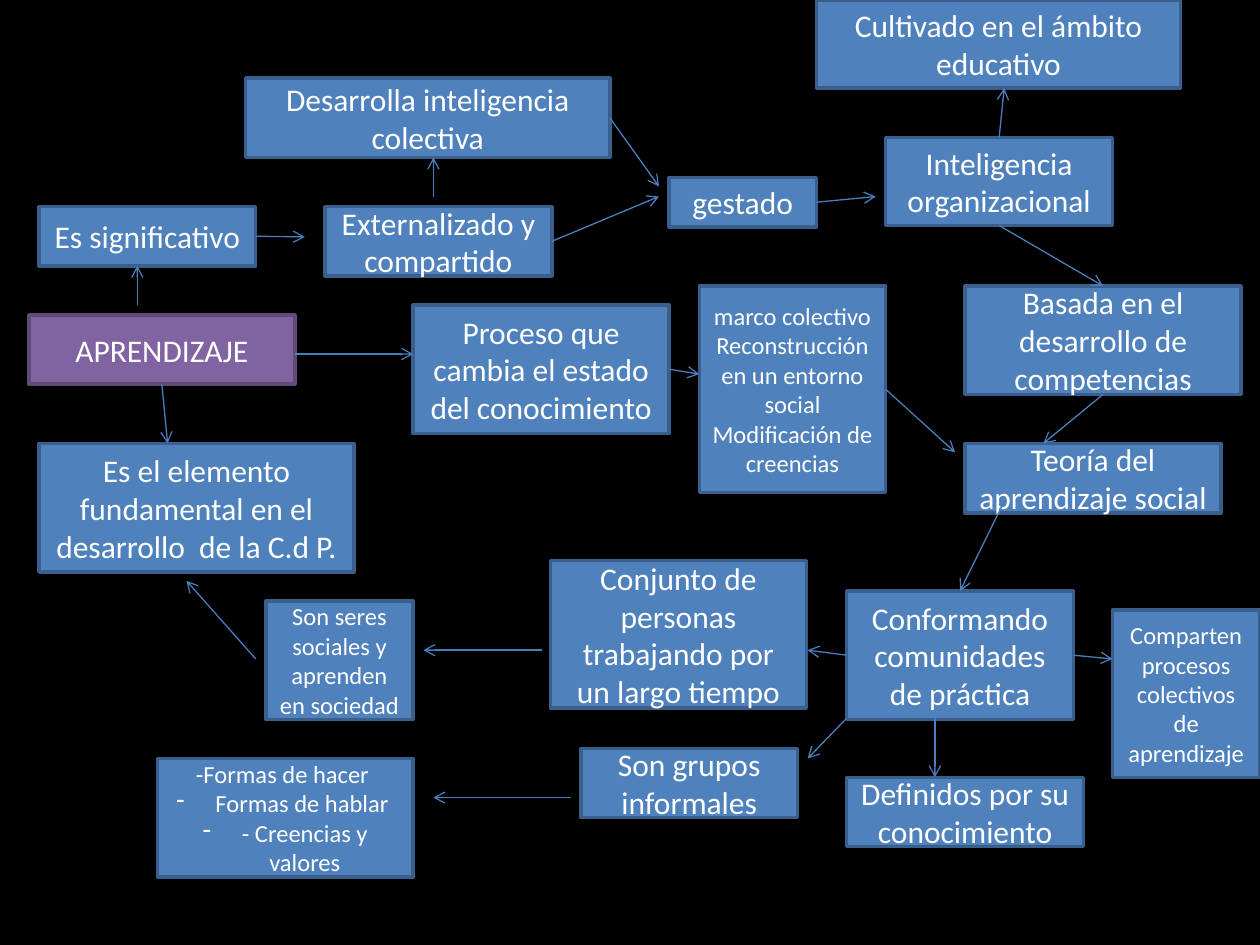
import pptx
import pptx.util
import pptx.dml.color
import pptx.enum.shapes
import pptx.enum.text
import pptx.oxml.ns
import lxml.etree

Inches = pptx.util.Inches
RGBColor = pptx.dml.color.RGBColor
BLACK = RGBColor(0x00, 0x00, 0x00)
WHITE = RGBColor(0xFF, 0xFF, 0xFF)
BLUE = RGBColor(0x4F, 0x81, 0xBD)
BLUE_EDGE = RGBColor(0x3A, 0x5F, 0x8C)
PURPLE = RGBColor(0x80, 0x64, 0xA2)
PURPLE_EDGE = RGBColor(0x5F, 0x4A, 0x78)
ARROW = RGBColor(0x4B, 0x7E, 0xBC)

FONT = "Calibri"
LARGE, SMALL = 18, 14
TOP, LEFT, BOTTOM, RIGHT = range(4)

# Concepts: name -> (left, top, width, height), text size, paragraphs
CONCEPTS = {
    "aprendizaje": ((0.23, 2.5, 2.11, 0.55), LARGE, ["APRENDIZAJE"]),
    "proceso": ((3.28, 2.42, 2.03, 1.02), LARGE,
                ["Proceso que cambia el estado del conocimiento"]),
    "significativo": ((0.31, 1.64, 1.72, 0.47), LARGE, ["Es significativo"]),
    "externalizado": ((2.58, 1.64, 1.8, 0.55), LARGE, ["Externalizado y compartido"]),
    "colectiva": ((1.95, 0.62, 2.89, 0.63), LARGE, ["Desarrolla inteligencia colectiva"]),
    "gestado": ((5.31, 1.41, 1.17, 0.39), LARGE, ["gestado"]),
    "organizacional": ((7.03, 1.09, 1.8, 0.7), LARGE, ["Inteligencia organizacional"]),
    "cultivado": ((6.48, 0, 2.89, 0.7), LARGE, ["Cultivado en el ámbito educativo"]),
    "competencias": ((7.66, 2.27, 2.19, 0.86), LARGE,
                     ["Basada en el desarrollo de competencias"]),
    "teoria": ((7.66, 3.52, 2.03, 0.55), LARGE, ["Teoría del aprendizaje social"]),
    "marco": ((5.55, 2.27, 1.48, 1.64), SMALL,
              ["marco colectivo", "Reconstrucción en un entorno social",
               "Modificación de creencias"]),
    "comunidades": ((6.72, 4.69, 1.8, 1.02), LARGE, ["Conformando comunidades de práctica"]),
    "conjunto": ((4.37, 4.45, 2.03, 1.17), LARGE,
                 ["Conjunto de personas trabajando por un largo tiempo"]),
    "grupos": ((4.61, 5.94, 1.72, 0.55), LARGE, ["Son grupos informales"]),
    "definidos": ((6.72, 6.17, 1.88, 0.55), LARGE, ["Definidos por su conocimiento"]),
    "comparten": ((8.83, 4.84, 1.17, 1.33), SMALL,
                  ["Comparten procesos colectivos de aprendizaje"]),
    "elemento": ((0.31, 3.52, 2.5, 1.02), LARGE,
                 ["Es el elemento fundamental en el desarrollo  de la C.d P."]),
    "seres": ((2.11, 4.77, 1.17, 0.94), SMALL, ["Son seres sociales y aprenden en sociedad"]),
    "formas": ((1.25, 6.02, 2.03, 0.94), SMALL,
               ["-Formas de hacer ", "Formas de hablar ", "- Creencias y valores"]),
}

# Arrows: each end is a point or a (concept, side) pair
ARROWS = [
    ((2.34, 2.81), (3.28, 2.81)),
    ((1.09, 2.42), (1.09, 2.11)),
    (("significativo", RIGHT), (2.42, 1.88)),
    ((3.44, 1.56), (3.44, 1.25)),
    (("externalizado", RIGHT), (5.23, 1.56)),
    (("colectiva", RIGHT), (5.23, 1.48)),
    (("gestado", RIGHT), (6.95, 1.56)),
    (("organizacional", TOP), (7.97, 0.7)),
    (("organizacional", BOTTOM), ("competencias", TOP)),
    (("competencias", BOTTOM), (8.28, 3.52)),
    (("proceso", RIGHT), (5.55, 2.97)),
    (("marco", RIGHT), (7.58, 3.59)),
    ((7.97, 3.98), ("comunidades", TOP)),
    (("comunidades", LEFT), (6.41, 5.16)),
    ((6.72, 5.7), (6.41, 6.02)),
    ((7.42, 5.7), (7.42, 6.17)),
    (("comunidades", RIGHT), (8.83, 5.23)),
    (("aprendizaje", BOTTOM), (1.33, 3.52)),
    ((4.3, 5.16), (3.36, 5.16)),
    ((2.03, 5.23), (1.48, 4.61)),
    ((4.53, 6.33), (3.44, 6.33)),
]


def add_concept(page, bounds, size, lines, fill=BLUE, edge=BLUE_EDGE):
    box = page.shapes.add_shape(pptx.enum.shapes.MSO_SHAPE.RECTANGLE,
                                *[Inches(length) for length in bounds])
    box.shadow.inherit = False
    box.fill.solid()
    box.fill.fore_color.rgb = fill
    box.line.color.rgb = edge
    box.line.width = pptx.util.Pt(2)
    frame = box.text_frame
    frame.word_wrap = True
    frame.vertical_anchor = pptx.enum.text.MSO_ANCHOR.MIDDLE
    frame.text = "\n".join(lines)
    for para in frame.paragraphs:
        para.alignment = pptx.enum.text.PP_ALIGN.CENTER
        for span in para.runs:
            span.font.name = FONT
            span.font.size = pptx.util.Pt(size)
            span.font.color.rgb = WHITE
    return box


def add_dash_bullet(para):
    indent = Inches(0.31)
    properties = para._p.get_or_add_pPr()
    properties.set("marL", str(indent))
    properties.set("indent", str(-indent))
    bullet = lxml.etree.SubElement(properties, pptx.oxml.ns.qn("a:buChar"))
    bullet.set("char", "-")


def add_arrow(page, boxes, start, end):
    # Ends tied to a concept get their position when they are connected
    points = [(0, 0) if place[0] in boxes else place for place in (start, end)]
    arrow = page.shapes.add_connector(
        pptx.enum.shapes.MSO_CONNECTOR.STRAIGHT,
        *[Inches(length) for point in points for length in point])
    for place, connect in ((start, arrow.begin_connect), (end, arrow.end_connect)):
        if place[0] in boxes:
            connect(boxes[place[0]], place[1])
    arrow.line.color.rgb = ARROW
    arrow.line.width = pptx.util.Pt(0.75)
    head = lxml.etree.SubElement(arrow.line._get_or_add_ln(), pptx.oxml.ns.qn("a:tailEnd"))
    head.set("type", "arrow")
    lxml.etree.SubElement(arrow._element.spPr, pptx.oxml.ns.qn("a:effectLst"))


def add_concept_map(page):
    boxes = {name: add_concept(page, *concept) for name, concept in CONCEPTS.items()}

    # The central concept stands out in purple
    centre = boxes["aprendizaje"]
    centre.fill.fore_color.rgb = PURPLE
    centre.line.color.rgb = PURPLE_EDGE

    # Dashes in the list of shared forms
    for para in boxes["formas"].text_frame.paragraphs[1:]:
        add_dash_bullet(para)

    for start, end in ARROWS:
        add_arrow(page, boxes, start, end)


def main():
    deck = pptx.Presentation()
    deck.slide_width, deck.slide_height = Inches(10), Inches(7.5)
    page = deck.slides.add_slide(deck.slide_layouts[6])
    page.background.fill.solid()
    page.background.fill.fore_color.rgb = BLACK
    add_concept_map(page)
    deck.save("out.pptx")


if __name__ == "__main__":
    main()
